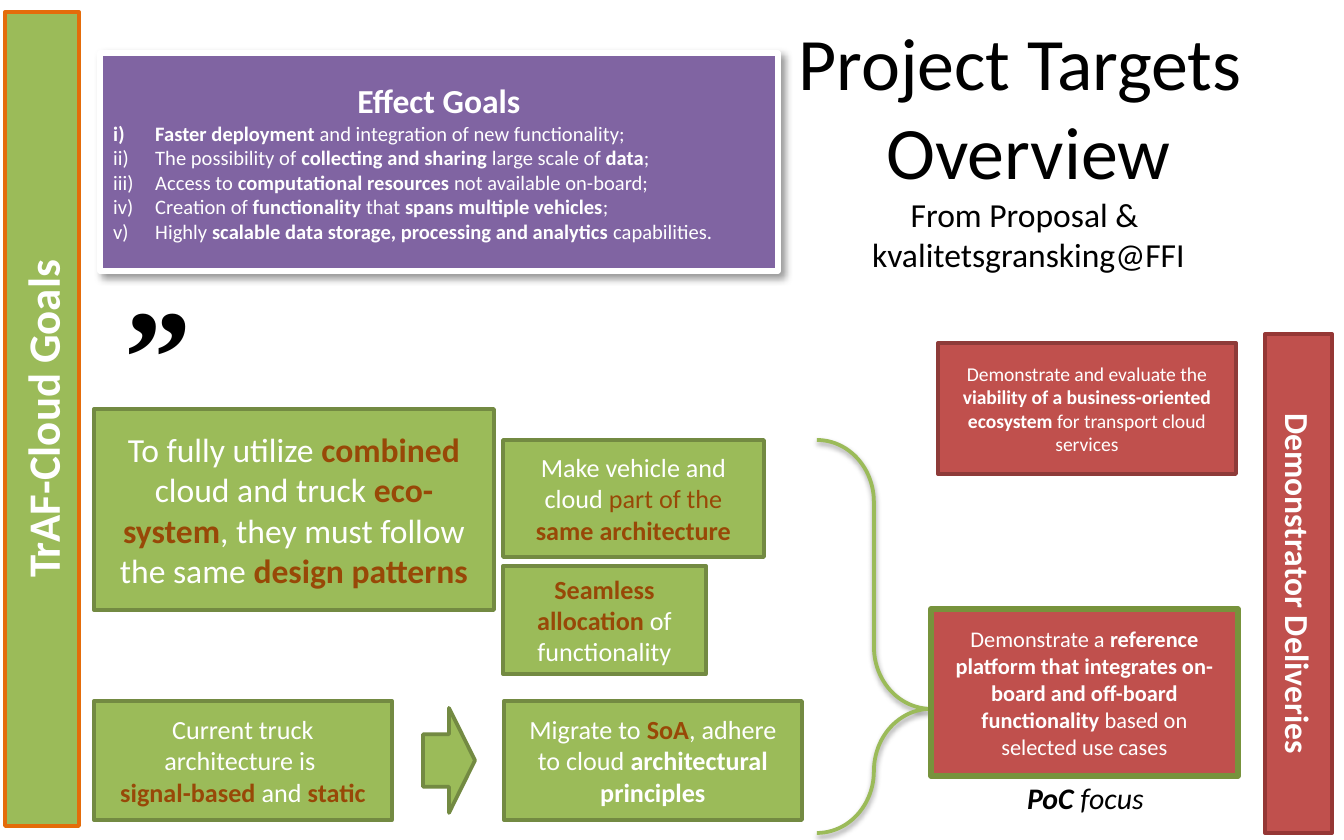
from lxml.etree import SubElement
from pptx import Presentation
from pptx.dml.color import RGBColor as RGB
from pptx.enum.shapes import MSO_SHAPE as Kind
from pptx.enum.text import MSO_ANCHOR as Anchor, MSO_AUTO_SIZE as Fit, PP_ALIGN as Align
from pptx.oxml.ns import qn
from pptx.util import Pt

PX = 914400 / 134.4
HUES = {
    "white": "FFFFFF", "black": "000000", "brown": "984807",
    "green": "9BBB59", "moss": "738A42", "olive": "77933C", "orange": "E46C0A",
    "red": "C0504D", "wine": "8E3B39", "maroon": "953735", "purple": "8064A2",
}


def px(*nums):
    return [round(n * PX) for n in nums]


def write(par, runs, size, hue="white", font="Calibri"):
    """Add (text, marks) runs; marks: b bold, i italic, d brown; a newline breaks the line."""
    for text, marks in runs:
        if text == "\n":
            par.add_line_break()
            continue
        run = par.add_run()
        run.text = text
        face = run.font
        face.name, face.size = font, Pt(size)
        face.bold, face.italic = "b" in marks, "i" in marks
        face.color.rgb = RGB.from_string(HUES["brown" if "d" in marks else hue])


prs = Presentation()
prs.slide_width, prs.slide_height = px(1344, 840)
slide = prs.slides.add_slide(prs.slide_layouts[5])
shapes = slide.shapes

# Title
title = shapes.title
title.left, title.top, title.width, title.height = px(718, 9, 621, 273)
frame = title.text_frame
frame.auto_size, frame.vertical_anchor = Fit.NONE, Anchor.MIDDLE
par = frame.paragraphs[0]
par.alignment = Align.CENTER
write(par, [("Project Targets ", ""), ("\n", ""), ("Overview", ""), ("\n", "")], 39.6, "black")
write(par, [("From Proposal & ", ""), ("\n", ""), ("kvalitetsgransking@FFI", "")], 18, "black")

# Boxes: key, kind, place, fill, line, line width, text size, text direction, runs
BOXES = [
    ("goals bar", Kind.RECTANGLE, (5, 12, 74, 814), "green", "orange", 2, 24, "vert270",
     [("TrAF-Cloud Goals", "b")]),
    ("same", Kind.RECTANGLE, (503, 440, 261, 117), "green", "moss", 2, 14, "horz",
     [("Make vehicle and cloud ", ""), ("part of the ", "d"), ("same architecture", "bd")]),
    ("patterns", Kind.RECTANGLE, (94, 409, 400, 201), "green", "moss", 2, 18, "horz",
     [("To fully utilize ", ""), ("combined ", "bd"), ("cloud and truck ", ""),
      ("eco-system", "bd"), (", they must follow the same ", ""), ("design patterns", "bd")]),
    ("seamless", Kind.RECTANGLE, (503, 566, 203, 108), "green", "moss", 2, 14, "horz",
     [("Seamless allocation ", "bd"), ("of functionality", "")]),
    ("current", Kind.RECTANGLE, (94, 701, 298, 119), "green", "moss", 2, 14, "horz",
     [("Current truck architecture is ", ""), ("\n", ""), ("signal-based ", "bd"),
      ("and ", ""), ("static", "bd")]),
    ("migrate", Kind.RECTANGLE, (504, 701, 298, 119), "green", "moss", 2, 14, "horz",
     [("Migrate to ", ""), ("SoA", "bd"), (", adhere to cloud ", ""),
      ("architectural principles", "b")]),
    ("arrow", Kind.RIGHT_ARROW, (423, 708, 52, 105), "green", "moss", 2, 14, "horz", []),
    ("demo bar", Kind.RECTANGLE, (1265, 334, 67, 499), "red", "maroon", 2, 18, "vert",
     [("Demonstrator Deliveries", "b")]),
    ("business", Kind.RECTANGLE, (938, 343, 298, 131), "red", "wine", 2, 10.5, "horz",
     [("Demonstrate and evaluate the ", ""),
      ("viability of a business-oriented ecosystem", "b"),
      (" for transport cloud services", "")]),
    ("brace", Kind.RIGHT_BRACE, (817, 440, 114, 393), None, "green", 2, 14, "horz", []),
    ("platform", Kind.RECTANGLE, (931, 609, 307, 167), "red", "olive", 3, 12, "horz",
     [("Demonstrate a ", ""),
      ("reference platform that integrates on-board and off-board functionality", "b"),
      (" based on selected use cases", "")]),
    ("effect", Kind.RECTANGLE, (100, 53, 678, 218), "purple", "white", 3, 18, "horz",
     [("Effect Goals", "b")]),
]
made = {}
for key, kind, place, fill, line, width, size, turn, runs in BOXES:
    box = made[key] = shapes.add_shape(kind, *px(*place))
    box.shadow.inherit = False
    if fill:
        box.fill.solid()
        box.fill.fore_color.rgb = RGB.from_string(HUES[fill])
    else:
        box.fill.background()
    box.line.color.rgb = RGB.from_string(HUES[line])
    box.line.width = Pt(width)
    if not runs:
        continue
    frame = box.text_frame
    frame.word_wrap, frame.vertical_anchor = True, Anchor.MIDDLE
    frame._txBody.bodyPr.set("vert", turn)
    frame.paragraphs[0].alignment = Align.CENTER
    write(frame.paragraphs[0], runs, size)

brace, effect = made["brace"], made["effect"]
brace.adjustments[0], brace.adjustments[1] = 0.88, 13 / 19

# Numbered effect goals
GOALS = [
    [("Faster deployment ", "b"), ("and integration of new functionality;", "")],
    [("The possibility of ", ""), ("collecting and sharing ", "b"),
     ("large scale of ", ""), ("data", "b"), (";", "")],
    [("Access to ", ""), ("computational resources ", "b"), ("not available on-board;", "")],
    [("Creation of ", ""), ("functionality ", "b"), ("that ", ""),
     ("spans multiple vehicles", "b"), (";", "")],
    [("Highly ", ""), ("scalable data storage, processing and analytics ", "b"),
     ("capabilities.", "")],
]
dent, = px(42)
for runs in GOALS:
    par = effect.text_frame.add_paragraph()
    par.alignment = Align.LEFT
    write(par, runs, 11)
    props = par._p.get_or_add_pPr()
    props.set("marL", str(dent))
    props.set("indent", str(-dent))
    SubElement(props, qn("a:buFont"), typeface="+mj-lt")
    SubElement(props, qn("a:buAutoNum"), type="romanLcParenR")

# Shadows: blur, distance, angle, opacity in percent
for box, blur, dist, angle, alpha in [(brace, 3.1, 1.6, 90, 38), (effect, 4, 3, 45, 40)]:
    glow = SubElement(box._element.spPr.find(qn("a:effectLst")), qn("a:outerShdw"),
                      blurRad=str(Pt(blur)), dist=str(Pt(dist)),
                      dir=str(angle * 60000), rotWithShape="0")
    tint = SubElement(glow, qn("a:srgbClr"), val=HUES["black"])
    SubElement(tint, qn("a:alpha"), val=str(alpha * 1000))

# Loose text
LABELS = [
    ((111, 263, 98, 110), True, [("”", "b")], 72, "Times New Roman"),
    ((1014, 773, 145, 50), False, [("PoC", "bi"), (" focus", "i")], 16, "Calibri"),
]
for place, wrap, runs, size, font in LABELS:
    frame = shapes.add_textbox(*px(*place)).text_frame
    frame.word_wrap = wrap
    frame.auto_size = Fit.SHAPE_TO_FIT_TEXT
    write(frame.paragraphs[0], runs, size, "black", font)

prs.save("out.pptx")
